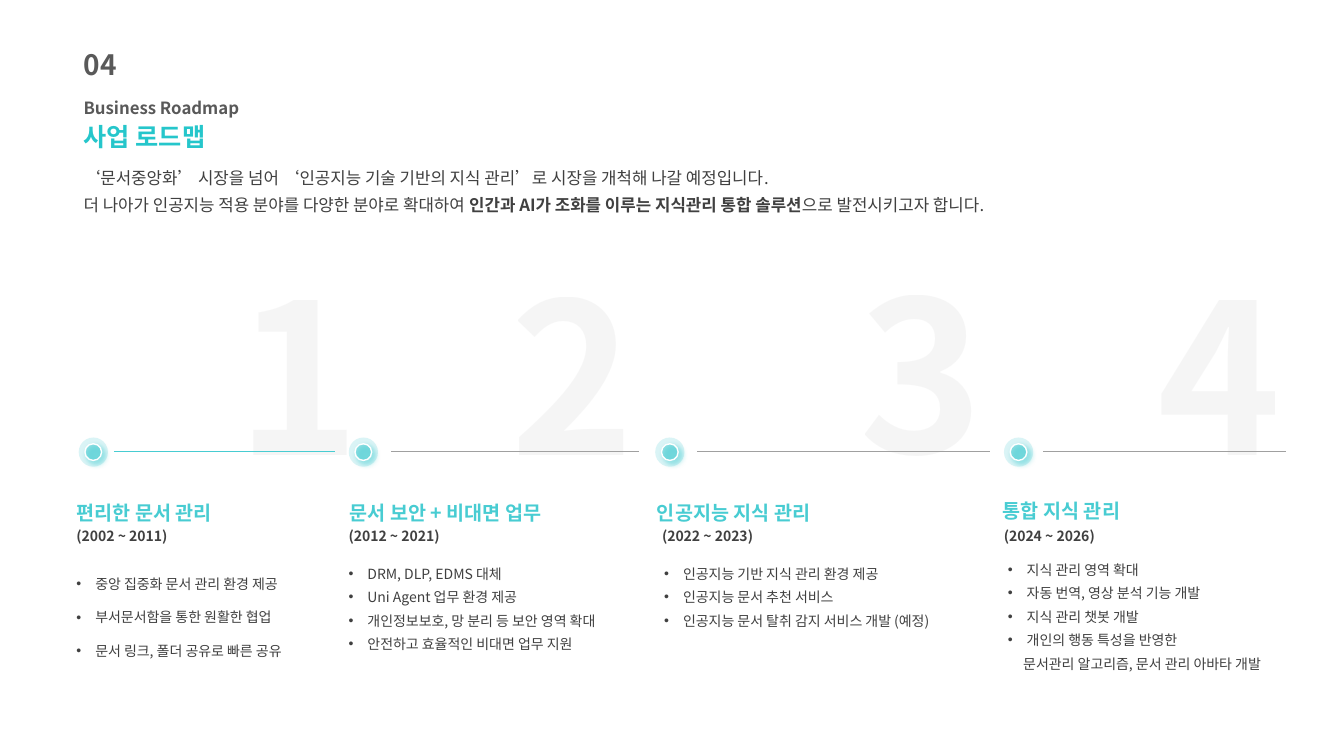
from dataclasses import dataclass
from lxml.etree import SubElement
from pptx import Presentation
from pptx.dml.color import RGBColor
from pptx.enum.shapes import MSO_CONNECTOR as Link, MSO_SHAPE as Form
from pptx.enum.text import MSO_ANCHOR as Anchor, MSO_AUTO_SIZE as Fit
from pptx.oxml.ns import qn
from pptx.util import Pt

FONT = "Noto Sans CJK KR"
TEAL, DEEP, DARK, GRAY = "48CCD2", "25C6CB", "404040", "595959"


@dataclass
class Stage:
    title: str
    years: str
    items: list
    head: tuple
    date: float
    body: tuple
    dot: float
    line: tuple
    digit: tuple
    hue: str = "A0A0A0"
    space: float = 1.4
    tail: str = ""


STAGES = [
    Stage("편리한 문서 관리", "(2002 ~ 2011)",
          ["중앙 집중화 문서 관리 환경 제공", "부서문서함을 통한 원활한 협업",
           "문서 링크, 폴더 공유로 빠른 공유"],
          (47.5, 351.4, 191.5), 47.5, (47.5, 395.3, 185, 76.3),
          56.2, (81.4, 239), (162, 172.1), hue=TEAL, space=2),
    Stage("문서 보안 + 비대면 업무", "(2012 ~ 2021)",
          ["DRM, DLP, EDMS 대체", "Uni Agent 업무 환경 제공",
           "개인정보보호, 망 분리 등 보안 영역 확대",
           "안전하고 효율적인 비대면 업무 지원"],
          (242.6, 351.4, 191.5), 241.9, (241.9, 395.3, 220.3, 73.4),
          249.1, (279.4, 456.5), (357.8, 172.1)),
    Stage("인공지능 지식 관리", "(2022 ~ 2023)",
          ["인공지능 기반 지식 관리 환경 제공", "인공지능 문서 추천 서비스",
           "인공지능 문서 탈취 감지 서비스 개발 (예정)"],
          (462.2, 351.4, 226), 465.8, (467.3, 395.3, 226, 56.2),
          468, (498.2, 707), (607, 170.6)),
    Stage("통합 지식 관리", "(2024 ~ 2026)",
          ["지식 관리 영역 확대", "자동 번역, 영상 분석 기능 개발",
           "지식 관리 챗봇 개발", "개인의 행동 특성을 반영한"],
          (709.2, 349.9, 226), 709.9, (712.8, 392.4, 226, 92.2),
          717.1, (745.2, 918.7), (819.4, 172.1),
          tail="문서관리 알고리즘, 문서 관리 아바타 개발"),
]


def paint(color, hue):
    color.rgb = RGBColor.from_string(hue)


def fade(node, share):
    for tint in node.iter(qn("a:srgbClr")):
        SubElement(tint, qn("a:alpha"), val=str(share * 1000))


def style(run, size, hue, bold=False):
    font = run.font
    font.size, font.bold, font.name = Pt(size), bold, FONT
    paint(font.color, hue)
    SubElement(font._element, qn("a:ea"), typeface=FONT)


def write(slide, box, lines, size, hue, bold=False, space=None):
    area = slide.shapes.add_textbox(*map(Pt, box))
    frame = area.text_frame
    frame.word_wrap = True
    frame.auto_size = Fit.SHAPE_TO_FIT_TEXT
    frame.text = "\n".join(lines)
    for para in frame.paragraphs:
        para.line_spacing = space
        for run in para.runs:
            style(run, size, hue, bold)
    return frame


def indent(para, left, mark=None):
    props = para._p.get_or_add_pPr()
    props.set("marL", str(Pt(left)))
    if mark:
        props.set("indent", str(-Pt(left)))
        SubElement(props, qn("a:buFont"), typeface="Arial")
        SubElement(props, qn("a:buChar"), char=mark)


def glow(shape):
    effects = shape._element.spPr.find(qn("a:effectLst"))
    cast = SubElement(effects, qn("a:outerShdw"), blurRad=str(Pt(4)),
                      dist=str(Pt(3)), dir=str(45 * 60000), algn="tl",
                      rotWithShape="0")
    SubElement(cast, qn("a:srgbClr"), val=DEEP)
    fade(cast, 70)


def disc(slide, left, top, size, share):
    shape = slide.shapes.add_shape(Form.OVAL, Pt(left), Pt(top), Pt(size), Pt(size))
    shape.shadow.inherit = False
    shape.fill.solid()
    paint(shape.fill.fore_color, TEAL)
    fade(shape._element.spPr, share)
    shape.line.fill.background()
    return shape


def marker(slide, left):
    disc(slide, left, 312.5, 20.9, 20)
    core = disc(slide, left + 4.5, 317, 11.9, 50)
    paint(core.line.color, "FFFFFF")
    core.line.width = Pt(1)
    glow(core)


def rule(slide, start, end, hue):
    line = slide.shapes.add_connector(Link.STRAIGHT, Pt(start), Pt(322.6),
                                      Pt(end), Pt(322.6))
    paint(line.line.color, hue)
    line.line.width = Pt(0.5)
    SubElement(line._element.spPr, qn("a:effectLst"))


def numeral(slide, number, spot):
    frame = write(slide, (*spot, 118, 189.4), [str(number)], 150, "A6A6A6", True)
    font = frame.paragraphs[0].runs[0].font
    font._element.set("spc", "-300")
    fade(font._element, 10)


def column(slide, stage):
    rule(slide, *stage.line, stage.hue)
    marker(slide, stage.dot)
    head = write(slide, (*stage.head, 25.9), [stage.title], 14, TEAL, True, 1.2)
    head.vertical_anchor = Anchor.MIDDLE
    write(slide, (stage.date, 369.4, 98, 21.6), [stage.years], 10, DARK, True, 1.3)
    lines = stage.items + ([stage.tail] if stage.tail else [])
    body = write(slide, stage.body, lines, 10, DARK, space=stage.space)
    for para in body.paragraphs[:len(stage.items)]:
        indent(para, 13.5, "•")
    for para in body.paragraphs[len(stage.items):]:
        indent(para, 11)


def header(slide):
    write(slide, (52.6, 30.2, 176.4, 31.7), ["04"], 20, GRAY, True)
    title = write(slide, (52.6, 64.8, 215.3, 45.4),
                  ["Business Roadmap", "사업 로드맵"], 12, GRAY, True, 1.1)
    name = title.paragraphs[1].runs[0].font
    name.size = Pt(18)
    paint(name.color, DEEP)
    intro = write(slide, (52.6, 112.3, 740.2, 45.4), [
        "‘문서중앙화’ 시장을 넘어 ‘인공지능 기술 기반의 지식 관리’로 시장을 개척해 나갈 예정입니다.",
        "더 나아가 인공지능 적용 분야를 다양한 분야로 확대하여 "], 12, DARK, space=1.3)
    intro.word_wrap = False
    for text, bold in [("인간과 AI가 조화를 이루는 지식관리 통합 솔루션", True),
                       ("으로 발전시키고자 합니다.", False)]:
        run = intro.paragraphs[1].add_run()
        run.text = text
        style(run, 12, DARK, bold)


def main():
    deck = Presentation()
    deck.slide_width, deck.slide_height = Pt(960), Pt(540)
    slide = deck.slides.add_slide(deck.slide_layouts[6])
    for number, stage in enumerate(STAGES, 1):
        numeral(slide, number, stage.digit)
    header(slide)
    for stage in STAGES:
        column(slide, stage)
    deck.save("out.pptx")


if __name__ == "__main__":
    main()
